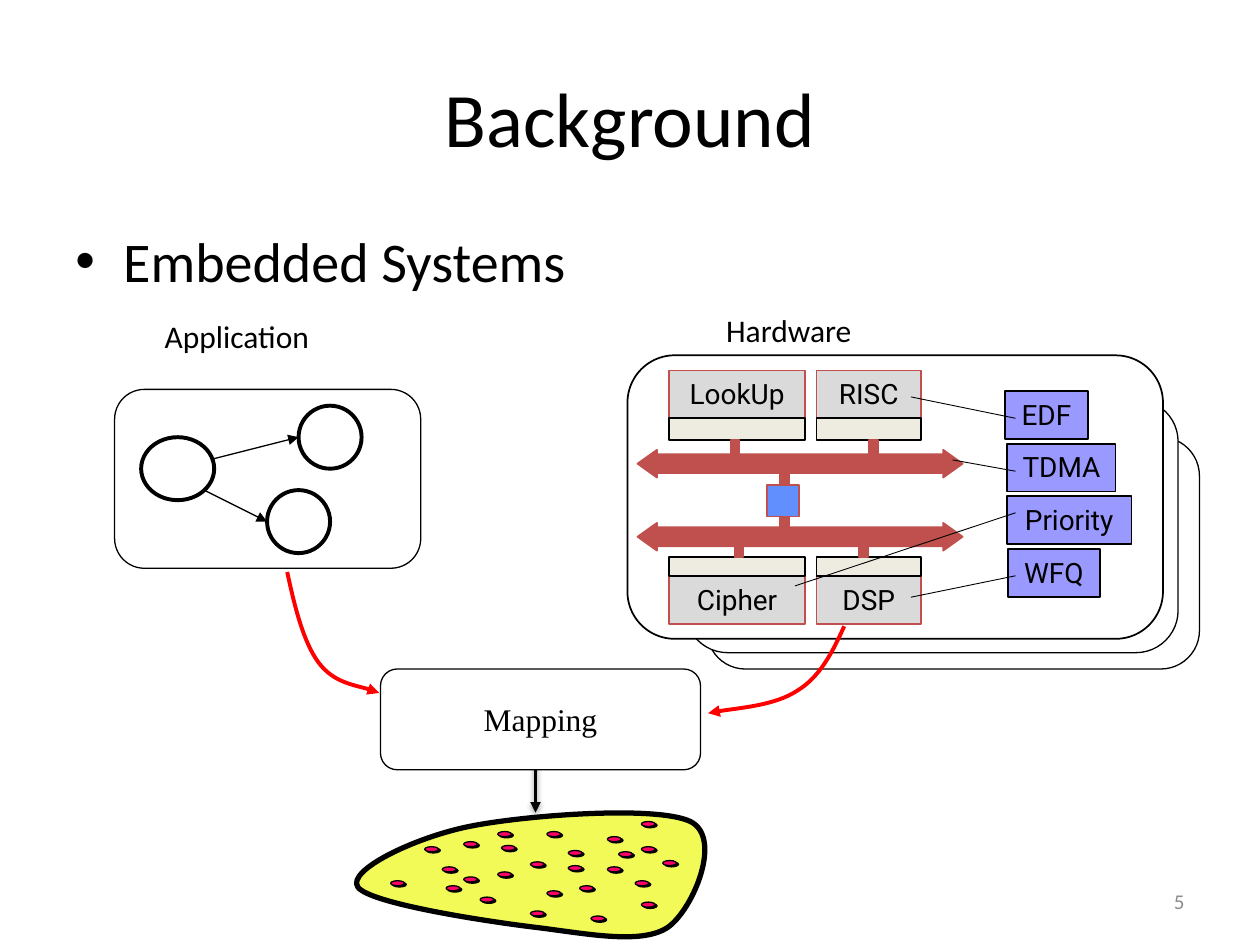
from lxml.etree import SubElement
from pptx import Presentation
from pptx.dml.color import RGBColor
from pptx.enum.shapes import MSO_CONNECTOR, MSO_SHAPE
from pptx.enum.text import MSO_ANCHOR, PP_ALIGN
from pptx.oxml.ns import qn
from pptx.util import Inches, Pt

# All lengths are in cells of a grid of 100 columns by 75 rows.
CELL = Inches(0.1)
COLUMNS, ROWS = 100, 75

COLORS = {
    "black": "000000", "white": "FFFFFF", "gray": "8C8C8C", "chip": "DADADA",
    "bus": "C0504D", "memory": "EEECE1", "bridge": "618FFD", "policy": "9999FF",
    "flow": "FF0000", "space": "F2FA58", "point": "FF0066",
}
CHIP_COLUMNS = [(53.1, 10.8), (64.8, 8.3)]
CHIP_NAMES = [("LookUp", "RISC"), ("Cipher", "DSP")]
POLICIES = [("EDF", 79.75, 6.6), ("TDMA", 79.95, 8.6), ("Priority", 79.9, 9.9), ("WFQ", 80, 7.3)]
POLICY_LINKS = [((72.3, 31.5), 33.2), ((75.6, 36.5), 37.4), ((63.1, 46.5), 40.7), ((72.3, 47.4), 45.7)]
DESIGN_POINTS = [
    (43.4, 66), (45.1, 67.5), (39.8, 67.1), (45.1, 68.7), (46, 70.3), (48.2, 68.8),
    (46.9, 72.7), (50.9, 71.6), (38.1, 71.2), (35.1, 68.8), (39.5, 69.2), (50.9, 67.2),
    (52.6, 68.3), (35.4, 70.3), (36.8, 66.8), (31, 69.9), (43.4, 70.7), (42.1, 72.3),
    (39.5, 66), (49.1, 67.6), (33.7, 67.2), (48.2, 66.4), (50.4, 69.9), (42.1, 68.4),
    (50.9, 65.2), (36.8, 69.6),
]


def cells(*values):
    return [round(value * CELL) for value in values]


def color(name):
    return RGBColor.from_string(COLORS[name])


def style(shape, fill, line, width):
    shape.shadow.inherit = False
    if fill:
        shape.fill.solid()
        shape.fill.fore_color.rgb = color(fill)
    else:
        shape.fill.background()
    shape.line.color.rgb = color(line)
    shape.line.width = Pt(width)


def add_arrowhead(shape):
    line = shape._element.spPr.find(qn("a:ln"))
    SubElement(line, qn("a:tailEnd"), type="triangle")


def write(shape, text, size, font="Calibri", ink="black", align=PP_ALIGN.CENTER,
          anchor=MSO_ANCHOR.MIDDLE, wrap=True):
    frame = shape.text_frame
    frame.text = text
    frame.word_wrap = wrap
    frame.vertical_anchor = anchor
    paragraph = frame.paragraphs[0]
    paragraph.alignment = align
    run_font = paragraph.runs[0].font
    run_font.name, run_font.size = font, Pt(size)
    run_font.color.rgb = color(ink)
    return paragraph


def add_text(slide, box, text, size, **options):
    return write(slide.shapes.add_textbox(*cells(*box)), text, size, **options)


def add_block(slide, kind, box, fill, line="black", width=1):
    shape = slide.shapes.add_shape(kind, *cells(*box))
    style(shape, fill, line, width)
    return shape


def add_labelled_block(slide, box, text, fill, line="black"):
    block = add_block(slide, MSO_SHAPE.RECTANGLE, box, fill, line)
    write(block, text, 16, "Roboto", anchor=MSO_ANCHOR.TOP, wrap=False)


def add_line(slide, start, end, width, arrow=False):
    connector = slide.shapes.add_connector(MSO_CONNECTOR.STRAIGHT, *cells(*start, *end))
    connector.line.color.rgb = color("black")
    connector.line.width = Pt(width)
    SubElement(connector._element.spPr, qn("a:effectLst"))
    if arrow:
        add_arrowhead(connector)
    return connector


def add_soft_shadow(connector):
    effects = connector._element.spPr.find(qn("a:effectLst"))
    shadow = SubElement(effects, qn("a:outerShdw"), blurRad=str(Pt(3.1)),
                        dist=str(Pt(1.6)), dir="5400000", rotWithShape="0")
    tint = SubElement(shadow, qn("a:srgbClr"), val=COLORS["black"])
    SubElement(tint, qn("a:alpha"), val="38000")


def add_curve(slide, start, curves, line, width, fill=None):
    """Draw a chain of cubic curves, each given as two controls and an end."""
    builder = slide.shapes.build_freeform(*cells(*start))
    points = [cells(*point) for curve in curves for point in curve]
    builder.add_line_segments(points, close=fill is not None)
    shape = builder.convert_to_shape()
    segments = list(shape._element.iter(qn("a:lnTo")))
    for first in range(0, len(points), 3):
        cubic = segments[first].makeelement(qn("a:cubicBezTo"))
        segments[first].addprevious(cubic)
        for segment in segments[first:first + 3]:
            cubic.append(segment[0])
            segment.getparent().remove(segment)
    style(shape, fill, line, width)
    return shape


def add_headings(slide):
    add_text(slide, (5, 3, 90, 12.5), "Background", 44)
    bullet = add_text(slide, (5, 17.5, 90, 49.5), "Embedded Systems", 32,
                      align=PP_ALIGN.LEFT, anchor=MSO_ANCHOR.TOP)
    properties = bullet._p.get_or_add_pPr()
    properties.set("marL", str(Inches(0.38)))
    properties.set("indent", str(-Inches(0.38)))
    SubElement(properties, qn("a:buFont"), typeface="Arial")
    SubElement(properties, qn("a:buChar"), char="•")
    add_text(slide, (6.7, 24.7, 24.2, 4), "Application", 18)
    add_text(slide, (50.5, 24.2, 24.2, 4), "Hardware", 18)
    add_text(slide, (71.7, 69.5, 23.3, 4), "5", 12, ink="gray", align=PP_ALIGN.RIGHT)


def add_application(slide):
    add_block(slide, MSO_SHAPE.ROUNDED_RECTANGLE, (9.1, 30.9, 24.3, 14.2), "white", width=0.75)
    for box in [(11.2, 34.7, 5.8, 5), (21.2, 38.9, 5, 5), (23.7, 32.2, 5, 5)]:
        add_block(slide, MSO_SHAPE.OVAL, box, "white", width=2.25)
    add_line(slide, (17, 36.4), (23.7, 34.7), 0.75, arrow=True)
    add_line(slide, (16.2, 38.9), (21.2, 41.4), 0.75, arrow=True)


def add_chips(slide):
    for names, chip_top, memory_top, memory_height in zip(
            CHIP_NAMES, (29.4, 45.7), (33.2, 44.2), (1.7, 1.5)):
        for name, (left, width) in zip(names, CHIP_COLUMNS):
            add_labelled_block(slide, (left, chip_top, width, 3.8), name, "chip", "bus")
            add_block(slide, MSO_SHAPE.RECTANGLE, (left, memory_top, width, memory_height), "memory")


def add_buses(slide):
    stubs = [(61.9, 40.7), (61.9, 37.2), (69, 34.9), (58, 34.9), (58.3, 42.7), (68.2, 42.7)]
    for left, top in stubs:
        add_block(slide, MSO_SHAPE.RECTANGLE, (left, top, 0.7, 1.5), "bus", "bus")
    for top in (35.7, 41.5):
        bus = add_block(slide, MSO_SHAPE.LEFT_RIGHT_ARROW, (50.6, top, 25.8, 2.2), "bus", "bus")
        bus.adjustments[0], bus.adjustments[1] = 0.68, 0.7
    add_block(slide, MSO_SHAPE.RECTANGLE, (60.9, 38.5, 2.5, 2.5), "bridge", "bus")


def add_hardware(slide):
    layers = [((56.1, 34.7, 39.1, 18.4), None, 0.75), ((54.4, 31.7, 39.1, 20.1), "white", 0.75),
              ((49.8, 28.2, 42.5, 22.5), "white", 1)]
    for box, fill, width in layers:
        add_block(slide, MSO_SHAPE.ROUNDED_RECTANGLE, box, fill, width=width)
    for row, (name, left, width) in enumerate(POLICIES):
        add_labelled_block(slide, (left, 31.05 + 4.17 * row, width, 3.8), name, "policy")
    add_chips(slide)
    add_buses(slide)
    for start, end_row in POLICY_LINKS:
        add_line(slide, start, (80.6, end_row), 0.5)


def add_mapping(slide):
    flows = [
        ((22.8, 45.4), [((23.4, 48.2), (24.1, 51), (25.3, 52.6)),
                        ((26.5, 54.2), (29.3, 54.6), (30.1, 55))]),
        ((67, 49.7), [((66.1, 51.7), (65.1, 53.7), (63.3, 54.8)),
                      ((61.5, 56), (57.4, 56.3), (56.2, 56.6))]),
    ]
    add_soft_shadow(add_line(slide, (42.5, 60.4), (42.5, 64.5), 2, arrow=True))
    for start, curves in flows:
        add_arrowhead(add_curve(slide, start, curves, "flow", 2.25))
    mapping = add_block(slide, MSO_SHAPE.ROUNDED_RECTANGLE, (30.2, 53.1, 25.4, 8), "white", width=0.75)
    write(mapping, "Mapping", 18, "Times New Roman", wrap=False)


def add_design_space(slide):
    outline = [
        ((32.8, 66.5), (27.5, 69.1), (28.4, 70.4)), ((29.3, 71.7), (38.4, 73.1), (42.5, 73.6)),
        ((46.6, 74.1), (50.9, 75), (53, 73.6)), ((55, 72.2), (57.4, 66.5), (54.8, 65.2)),
        ((52.1, 63.9), (41.6, 64.7), (37.2, 65.6)),
    ]
    add_curve(slide, (37.2, 65.6), outline, "black", 3, fill="space")
    for left, top in DESIGN_POINTS:
        for offset, fill in ((0.1, "black"), (0, "point")):
            box = (left + 1.5 * offset, top + offset, 1.1, 0.4)
            add_block(slide, MSO_SHAPE.OVAL, box, fill, width=0.75)


def main():
    presentation = Presentation()
    presentation.slide_width, presentation.slide_height = cells(COLUMNS, ROWS)
    slide = presentation.slides.add_slide(presentation.slide_layouts[6])
    add_headings(slide)
    add_hardware(slide)
    add_application(slide)
    add_mapping(slide)
    add_design_space(slide)
    presentation.save("out.pptx")


if __name__ == "__main__":
    main()
